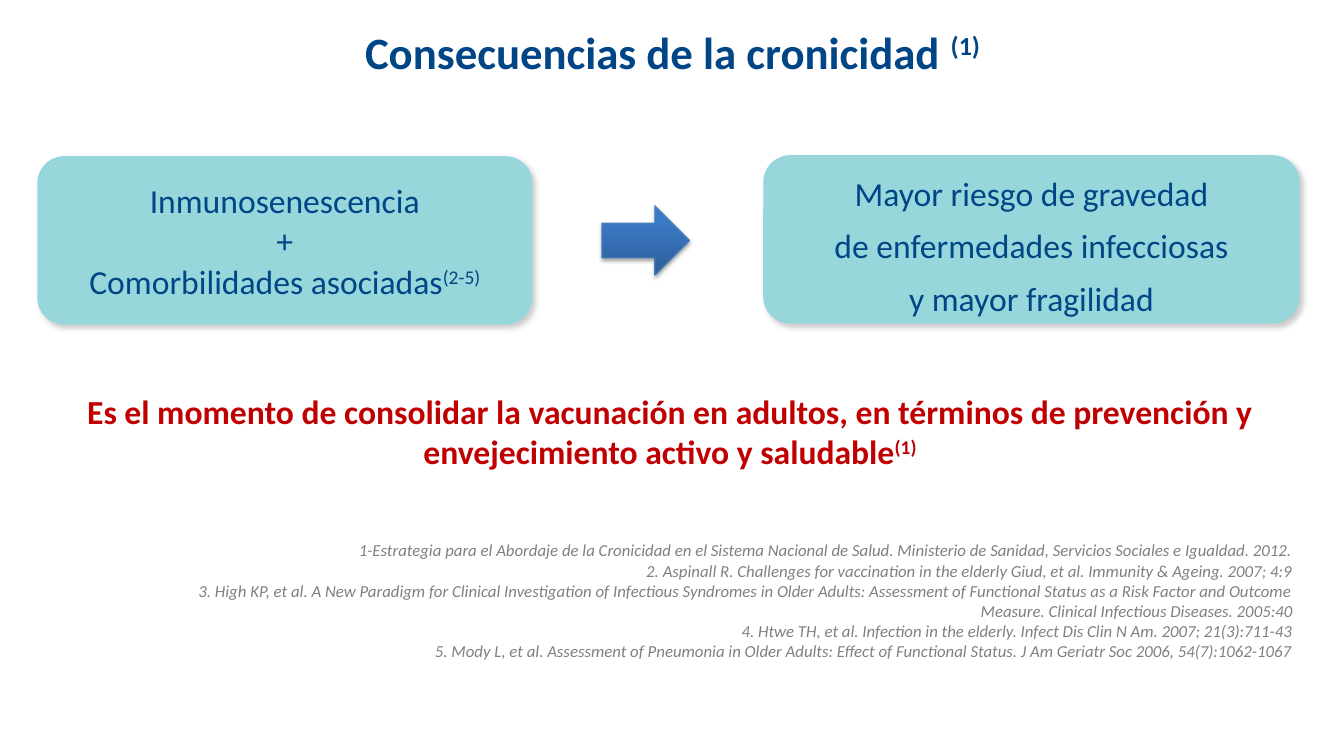
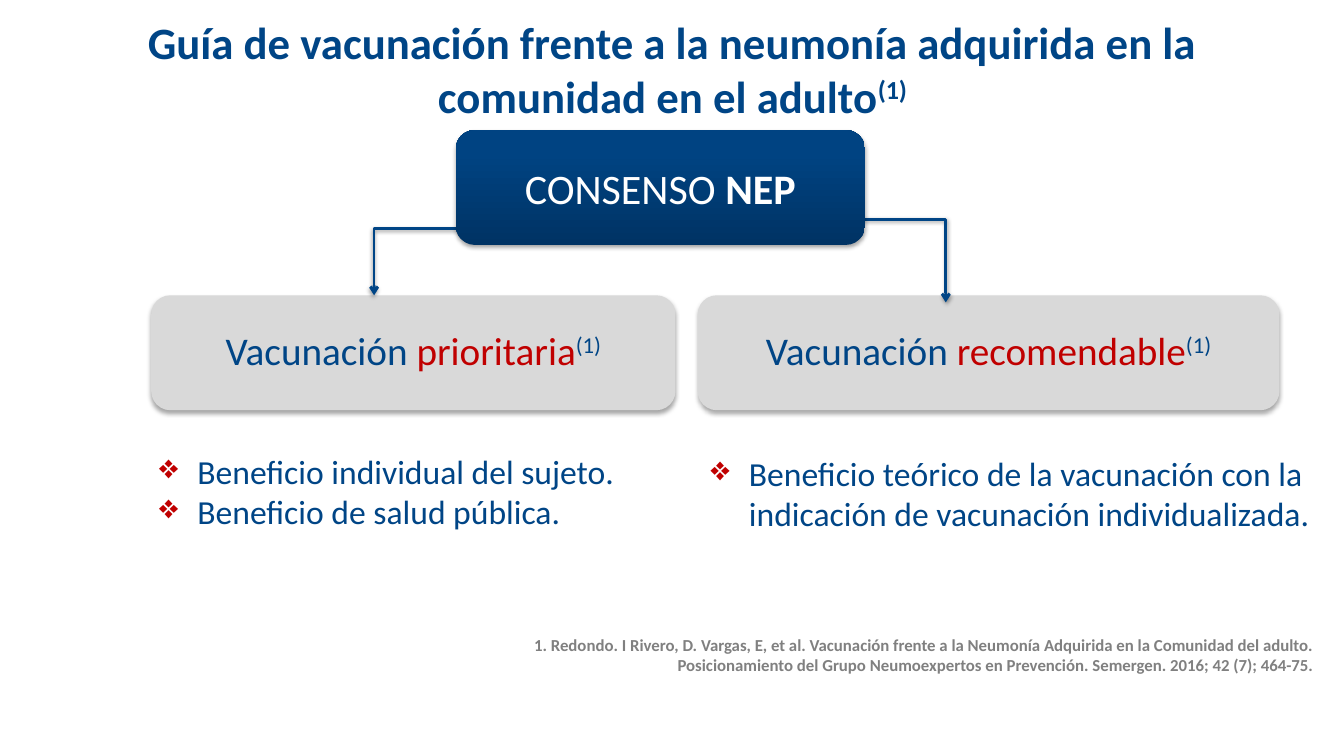
from pptx import Presentation
from pptx.dml.color import RGBColor
from pptx.enum.shapes import MSO_CONNECTOR, MSO_SHAPE
from pptx.enum.text import MSO_ANCHOR, PP_ALIGN
from pptx.oxml import parse_xml
from pptx.oxml.ns import nsdecls, qn
from pptx.util import Inches, Pt

NAVY = RGBColor(0x00, 0x45, 0x86)
RED = RGBColor(0xC0, 0x00, 0x00)
GRAY = RGBColor(0x80, 0x80, 0x80)
WHITE = RGBColor(0xFF, 0xFF, 0xFF)
AQUA = RGBColor(0x97, 0xD7, 0xDC)
SILVER = RGBColor(0xD9, 0xD9, 0xD9)
ARROW_TOP = RGBColor(0x3C, 0x7B, 0xC7)
ARROW_BOTTOM = RGBColor(0x2C, 0x5D, 0x98)
ARROW_EDGE = RGBColor(0x4A, 0x7E, 0xBB)
NAVY_DEEP = RGBColor(0x00, 0x33, 0x64)
NAVY_MID = RGBColor(0x00, 0x43, 0x82)
FONT = "Calibri"
RAISED = {"raised": True}


def write(box, paragraphs, size, color, align=PP_ALIGN.CENTER, bold=False,
          italic=False, spacing=None, bullet=None, anchor=MSO_ANCHOR.MIDDLE):
    """Fill a box with paragraphs, each a list of (text, changes) runs."""
    frame = box.text_frame
    frame.word_wrap = True
    frame.vertical_anchor = anchor
    for index, runs in enumerate(paragraphs):
        para = frame.add_paragraph() if index else frame.paragraphs[0]
        para.alignment = align
        if spacing:
            para.line_spacing = spacing
        if bullet:
            properties = para._p.get_or_add_pPr()
            properties.set("marL", str(Inches(0.38)))
            properties.set("indent", str(-Inches(0.38)))
            properties.append(parse_xml(
                f'<a:buClr {nsdecls("a")}><a:srgbClr val="{RED}"/></a:buClr>'))
            properties.append(parse_xml(f'<a:buChar {nsdecls("a")} char="{bullet}"/>'))
        for text, changes in runs:
            span = para.add_run()
            span.text = text
            span.font.name = FONT
            span.font.size = Pt(size)
            span.font.bold = changes.get("bold", bold)
            span.font.italic = italic
            span.font.color.rgb = changes.get("color", color)
            if changes.get("raised"):
                span._r.get_or_add_rPr().set("baseline", "30000")


def cast_shadow(item, color="000000", opacity=35, blur=3.1, distance=1.8, angle=90):
    """Add an outer shadow; call it once fill and line are set."""
    item._element.spPr.append(parse_xml(
        f'<a:effectLst {nsdecls("a")}><a:outerShdw blurRad="{Pt(blur)}" '
        f'dist="{Pt(distance)}" dir="{angle * 60000}" rotWithShape="0">'
        f'<a:srgbClr val="{color}"><a:alpha val="{opacity * 1000}"/></a:srgbClr>'
        '</a:outerShdw></a:effectLst>'))


deck = Presentation()
deck.slide_width = Inches(13.33)
deck.slide_height = Inches(7.5)

titles = [
    ("Consecuencias de la cronicidad ", 0.18),
    ("Guía de vacunación frente a la neumonía adquirida en la comunidad "
     "en el adulto", 0.35),
]
for text, top in titles:
    page = deck.slides.add_slide(deck.slide_layouts[5])
    title = page.shapes.title
    title.left, title.top = Inches(0.67), Inches(top)
    title.width, title.height = Inches(12), Inches(0.66)
    write(title, [[(text, {}), ("(1)", RAISED)]], 32, NAVY, bold=True)
consequences, guide = deck.slides

# Slide 1: consequences of chronic illness
cause_effect = [
    (0.37, 1.55, 4.91, None, [
        [("Inmunosenescencia", {})],
        [("+", {})],
        [("Comorbilidades asociadas", {}), ("(2-5)", RAISED)]]),
    (7.57, 1.54, 5.32, 1.3, [
        [("Mayor riesgo de gravedad", {})],
        [("de enfermedades infecciosas", {})],
        [("y mayor fragilidad", {})]]),
]
for left, top, width, spacing, paragraphs in cause_effect:
    card = consequences.shapes.add_shape(
        MSO_SHAPE.ROUNDED_RECTANGLE, Inches(left), Inches(top), Inches(width), Inches(1.67))
    card.adjustments[0] = 0.16
    card.fill.solid()
    card.fill.fore_color.rgb = AQUA
    card.line.fill.background()
    cast_shadow(card, "808080", 40, 4, 3, 45)
    write(card, paragraphs, 24, NAVY, spacing=spacing)

arrow = consequences.shapes.add_shape(
    MSO_SHAPE.RIGHT_ARROW, Inches(5.97), Inches(2.04), Inches(0.87), Inches(0.69))
arrow.fill.gradient()
arrow.fill.gradient_angle = 270
first, last = arrow.fill.gradient_stops
first.color.rgb, first.position = ARROW_TOP, 0.2
last.color.rgb, last.position = ARROW_BOTTOM, 1
arrow.line.color.rgb = ARROW_EDGE
arrow.line.width = Pt(0.75)
cast_shadow(arrow)

message = consequences.shapes.add_textbox(
    Inches(0.64), Inches(3.83), Inches(12.01), Inches(0.91))
write(message, [[
    ("Es el momento de consolidar la vacunación en adultos, en términos de "
     "prevención y envejecimiento activo y saludable", {}),
    ("(1)", RAISED)]], 24, RED, bold=True, anchor=MSO_ANCHOR.TOP)

references = [
    "1-Estrategia para el Abordaje de la Cronicidad en el Sistema Nacional de Salud. "
    "Ministerio de Sanidad, Servicios Sociales e Igualdad. 2012.",
    "2. Aspinall R. Challenges for vaccination in the elderly Giud, et al. "
    "Immunity & Ageing. 2007; 4:9",
    "3. High KP, et al. A New Paradigm for Clinical Investigation of Infectious "
    "Syndromes in Older Adults: Assessment of Functional Status as a Risk Factor "
    "and Outcome Measure. Clinical Infectious Diseases. 2005:40",
    "4. Htwe TH, et al. Infection in the elderly. Infect Dis Clin N Am. 2007; "
    "21(3):711-43",
    "5. Mody L, et al. Assessment of Pneumonia in Older Adults: Effect of Functional "
    "Status. J Am Geriatr Soc 2006, 54(7):1062-1067",
]
sources = consequences.shapes.add_textbox(
    Inches(1.2), Inches(5.31), Inches(11.72), Inches(1.48))
write(sources, [[(reference, {})] for reference in references], 12, GRAY,
      PP_ALIGN.RIGHT, italic=True, anchor=MSO_ANCHOR.TOP)

# Slide 2: vaccination guide
recommendations = [
    (1.5, 5.2, "prioritaria", 1.48, 4.42, 5.2,
     ["Beneficio individual del sujeto.", "Beneficio de salud pública."]),
    (6.92, 5.77, "recomendable", 6.95, 4.44, 6.24,
     ["Beneficio teórico de la vacunación con la indicación de vacunación "
      "individualizada."]),
]
for left, width, level, list_left, list_top, list_width, benefits in recommendations:
    card = guide.shapes.add_shape(
        MSO_SHAPE.ROUNDED_RECTANGLE, Inches(left), Inches(2.93), Inches(width), Inches(1.14))
    card.fill.solid()
    card.fill.fore_color.rgb = SILVER
    card.line.fill.background()
    cast_shadow(card)
    write(card, [[("Vacunación ", {}), (level, {"color": RED}), ("(1)", RAISED)]],
          28, NAVY, spacing=0.9)
    benefit_list = guide.shapes.add_textbox(
        Inches(list_left), Inches(list_top), Inches(list_width), Inches(0.91))
    write(benefit_list, [[(benefit, {})] for benefit in benefits], 24, NAVY,
          PP_ALIGN.LEFT, bullet="❖", anchor=MSO_ANCHOR.TOP)

# A branch leaves downwards, so its frame is turned a quarter about its centre
branches = [(4.59, 1.6, 3.71, 2.93, 0.5), (8.43, 1.82, 9.38, 3, 0.3)]
for start_x, start_y, end_x, end_y, bend in branches:
    center_x, center_y = (start_x + end_x) / 2, (start_y + end_y) / 2
    half_run, half_rise = (end_y - start_y) / 2, abs(end_x - start_x) / 2
    to_left = end_x < start_x
    side = 1 if to_left else -1
    branch = guide.shapes.add_connector(
        MSO_CONNECTOR.ELBOW,
        Inches(center_x - side * half_run), Inches(center_y - half_rise),
        Inches(center_x + side * half_run), Inches(center_y + half_rise))
    branch.line.color.rgb = NAVY
    branch.line.width = Pt(2)
    branch.line._get_or_add_ln().append(
        parse_xml(f'<a:tailEnd {nsdecls("a")} type="arrow"/>'))
    properties = branch._element.spPr
    properties.find(qn("a:xfrm")).set("rot", str((90 if to_left else 270) * 60000))
    properties.find(qn("a:prstGeom")).find(qn("a:avLst")).append(parse_xml(
        f'<a:gd {nsdecls("a")} name="adj1" fmla="val {round(bend * 100000)}"/>'))
    cast_shadow(branch, opacity=38, distance=1.6)

consensus = guide.shapes.add_shape(
    MSO_SHAPE.ROUNDED_RECTANGLE, Inches(4.52), Inches(1.29), Inches(4.06), Inches(1.14))
consensus.fill.gradient()
consensus.fill.gradient_angle = 90
first, last = consensus.fill.gradient_stops
first.color.rgb, first.position = NAVY_DEEP, 0
last.color.rgb, last.position = NAVY_MID, 0.8
consensus.line.fill.background()
cast_shadow(consensus)
write(consensus, [[("CONSENSO ", {}), ("NEP", {"bold": True})]], 30, WHITE)

source = guide.shapes.add_textbox(
    Inches(4.79), Inches(6.25), Inches(8.34), Inches(0.51))
write(source, [[
    ("1. Redondo. I Rivero, D. Vargas, E, et al. Vacunación frente a la Neumonía "
     "Adquirida en la Comunidad del adulto. Posicionamiento del Grupo Neumoexpertos "
     "en Prevención. Semergen. 2016; 42 (7); 464-75.", {})]],
    12, GRAY, PP_ALIGN.RIGHT, bold=True, anchor=MSO_ANCHOR.TOP)

deck.save("out.pptx")
